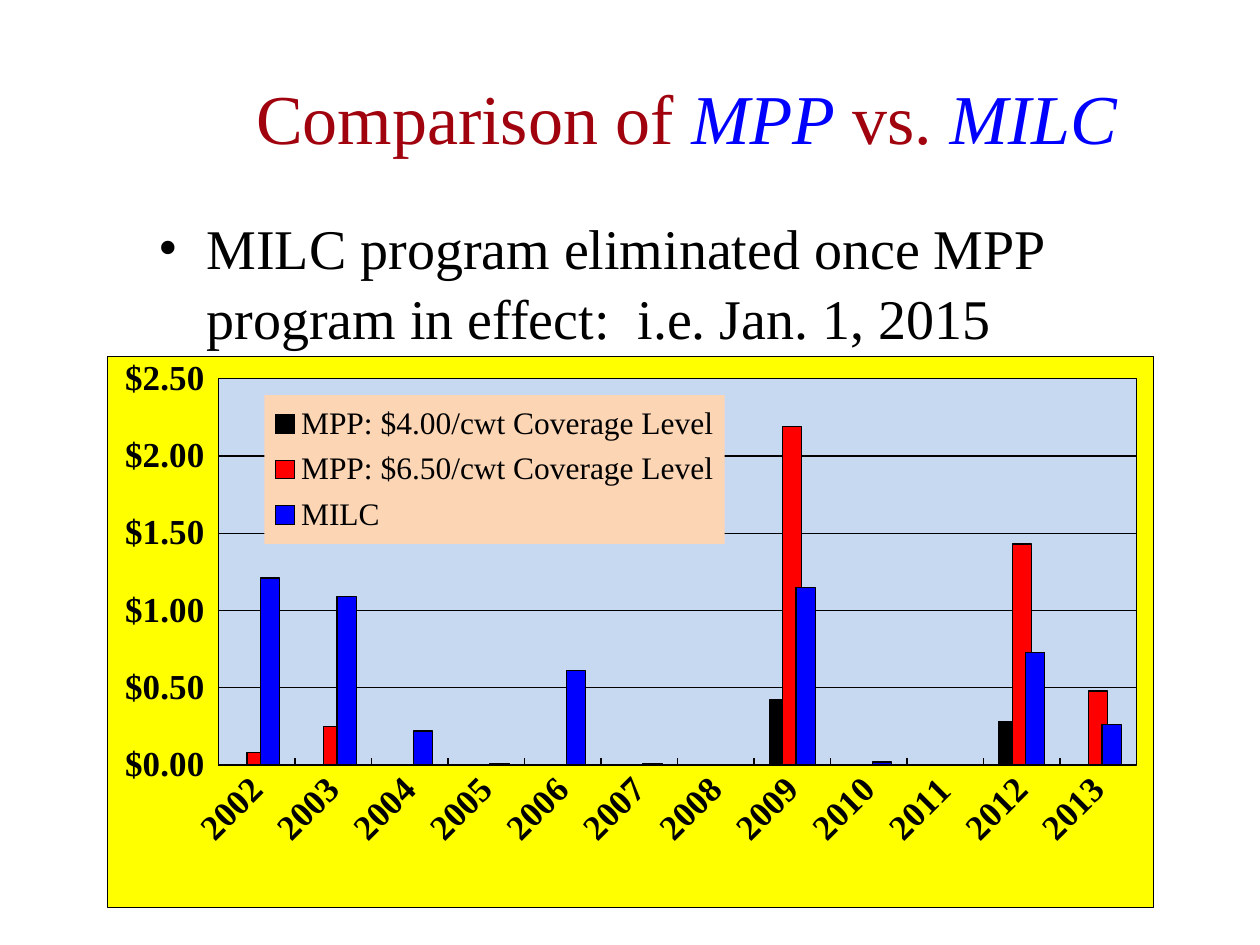
from dataclasses import dataclass

from lxml.etree import SubElement
from pptx import Presentation
from pptx.chart.data import CategoryChartData
from pptx.dml.color import RGBColor
from pptx.enum.chart import XL_CHART_TYPE as ChartType
from pptx.enum.chart import XL_LEGEND_POSITION as LegendPosition
from pptx.enum.chart import XL_TICK_MARK as TickMark
from pptx.enum.text import MSO_ANCHOR as Anchor
from pptx.enum.text import PP_ALIGN as Align
from pptx.oxml import parse_xml
from pptx.oxml.ns import nsdecls, qn
from pptx.util import Emu, Pt

EMU_PER_PX = 914400 / 126
FONT = "Times New Roman"
BLACK = RGBColor(0, 0, 0)
RED = RGBColor(0xFF, 0, 0)
BLUE = RGBColor(0, 0, 0xFF)
DARK_RED = RGBColor(0xA0, 0x02, 0x0E)
YELLOW = RGBColor(0xFF, 0xFF, 0)
PALE_BLUE = RGBColor(0xC6, 0xD9, 0xF1)
PEACH = RGBColor(0xFC, 0xD5, 0xB5)
YEARS = [str(year) for year in range(2002, 2014)]


@dataclass(frozen=True)
class Box:
    left: int
    top: int
    width: int
    height: int


@dataclass(frozen=True)
class TextRun:
    text: str
    color: RGBColor
    italic: bool = False


@dataclass(frozen=True)
class Payments:
    name: str
    color: RGBColor
    values: tuple[float, ...]


TITLE_RUNS = [
    TextRun("Comparison of ", DARK_RED),
    TextRun("MPP", BLUE, True),
    TextRun(" vs. ", DARK_RED),
    TextRun("MILC", BLUE, True),
]
BODY_RUNS = [TextRun("MILC program eliminated once MPP program in effect:  i.e. Jan. 1, 2015", BLACK)]
PROGRAMS = [
    Payments("MPP: $4.00/cwt Coverage Level", BLACK,
             (0, 0, 0, 0, 0, 0, 0, 0.42, 0, 0, 0.28, 0)),
    Payments("MPP: $6.50/cwt Coverage Level", RED,
             (0.08, 0.25, 0, 0, 0, 0, 0, 2.19, 0, 0, 1.43, 0.48)),
    Payments("MILC", BLUE,
             (1.21, 1.09, 0.22, 0.01, 0.61, 0.01, 0, 1.15, 0.02, 0, 0.73, 0.26)),
]


def px(length: int) -> Emu:
    return Emu(round(length * EMU_PER_PX))


def place(box: Box) -> tuple[Emu, ...]:
    return px(box.left), px(box.top), px(box.width), px(box.height)


def style_font(font, size: int, color: RGBColor = BLACK, bold: bool = False) -> None:
    font.name = FONT
    font.size = Pt(size)
    font.bold = bold
    font.color.rgb = color


def style_line(line, color: RGBColor = BLACK) -> None:
    line.color.rgb = color
    line.width = Pt(0.75)


def add_text(slide, box: Box, runs: list[TextRun], size: int, anchor: Anchor):
    frame = slide.shapes.add_textbox(*place(box)).text_frame
    frame.word_wrap = True
    frame.vertical_anchor = anchor
    paragraph = frame.paragraphs[0]
    for item in runs:
        run = paragraph.add_run()
        run.text = item.text
        style_font(run.font, size, item.color)
        run.font.italic = item.italic
    return paragraph


def add_bullet(paragraph, indent: int) -> None:
    properties = paragraph._p.get_or_add_pPr()
    properties.set("marL", str(px(indent)))
    properties.set("indent", str(-px(indent)))
    SubElement(properties, qn("a:buFont")).set("typeface", FONT)
    SubElement(properties, qn("a:buChar")).set("char", "•")


def area_format(fill: RGBColor, border: RGBColor | None = None):
    line = "<a:noFill/>"
    if border is not None:
        line = f'<a:solidFill><a:srgbClr val="{border}"/></a:solidFill>'
    return parse_xml(
        f'<c:spPr {nsdecls("c", "a")}><a:solidFill><a:srgbClr val="{fill}"/></a:solidFill>'
        f'<a:ln w="{Pt(0.75)}">{line}</a:ln></c:spPr>')


def manual_layout(x: float, y: float, w: float, h: float, inner: bool = False):
    target = '<c:layoutTarget val="inner"/>' if inner else ""
    modes = "".join(f'<c:{side}Mode val="edge"/>' for side in "xy")
    sizes = "".join(f'<c:{name} val="{value}"/>'
                    for name, value in zip("xywh", (x, y, w, h)))
    return parse_xml(f'<c:layout {nsdecls("c")}><c:manualLayout>{target}{modes}{sizes}'
                     "</c:manualLayout></c:layout>")


def remove_layout(element) -> None:
    for layout in element.findall(qn("c:layout")):
        element.remove(layout)


def style_axes(chart) -> None:
    years = chart.category_axis
    years.major_tick_mark = TickMark.INSIDE
    years.minor_tick_mark = TickMark.NONE
    style_line(years.format.line)
    style_font(years.tick_labels.font, 20, bold=True)
    years._element.find(qn("c:txPr")).find(qn("a:bodyPr")).set("rot", "-2700000")

    dollars = chart.value_axis
    dollars.minimum_scale, dollars.maximum_scale, dollars.major_unit = 0, 2.5, 0.5
    dollars.major_tick_mark = dollars.minor_tick_mark = TickMark.NONE
    dollars.format.line.fill.background()
    style_line(dollars.major_gridlines.format.line)
    style_font(dollars.tick_labels.font, 20, bold=True)
    dollars.tick_labels.number_format = r'"$"#,##0.00_);[Red]\("$"#,##0.00\)'
    dollars.tick_labels.number_format_is_linked = False


def style_legend(chart) -> None:
    chart.has_legend = True
    legend = chart.legend
    legend.position = LegendPosition.BOTTOM
    legend.include_in_layout = True
    style_font(legend.font, 18)
    element = legend._element
    remove_layout(element)
    element.find(qn("c:legendPos")).addnext(manual_layout(0.15, 0.07, 0.44, 0.27))
    element.find(qn("c:overlay")).addnext(area_format(PEACH))


def add_payment_chart(slide, box: Box) -> None:
    data = CategoryChartData(number_format='"$"#,##0.00')
    data.categories = YEARS
    for program in PROGRAMS:
        data.add_series(program.name, program.values)
    chart = slide.shapes.add_chart(ChartType.COLUMN_CLUSTERED, *place(box), data).chart
    chart.has_title = False
    style_font(chart.font, 20)
    plot = chart.plots[0]
    plot.gap_width = 160
    plot.overlap = 30
    plot.vary_by_categories = False
    for series, program in zip(plot.series, PROGRAMS):
        series.invert_if_negative = False
        series.format.fill.solid()
        series.format.fill.fore_color.rgb = program.color
        style_line(series.format.line)
    style_axes(chart)
    style_legend(chart)

    chart_element = chart._chartSpace.find(qn("c:chart"))
    chart_element.addnext(area_format(YELLOW, BLACK))
    plot_area = chart_element.find(qn("c:plotArea"))
    remove_layout(plot_area)
    plot_area.insert(0, manual_layout(0.106, 0.04, 0.878, 0.702, inner=True))
    plot_area.append(area_format(PALE_BLUE, BLACK))


def main() -> None:
    presentation = Presentation()
    presentation.slide_width, presentation.slide_height = px(1260), px(945)
    slide = presentation.slides.add_slide(presentation.slide_layouts[6])
    add_payment_chart(slide, Box(107, 356, 1047, 552))
    title = add_text(slide, Box(176, 38, 1021, 158), TITLE_RUNS, 40, Anchor.MIDDLE)
    title.alignment = Align.CENTER
    body = add_text(slide, Box(146, 205, 966, 600), BODY_RUNS, 32, Anchor.TOP)
    add_bullet(body, 48)
    body.line_spacing = 1.04
    presentation.save("out.pptx")


if __name__ == "__main__":
    main()
